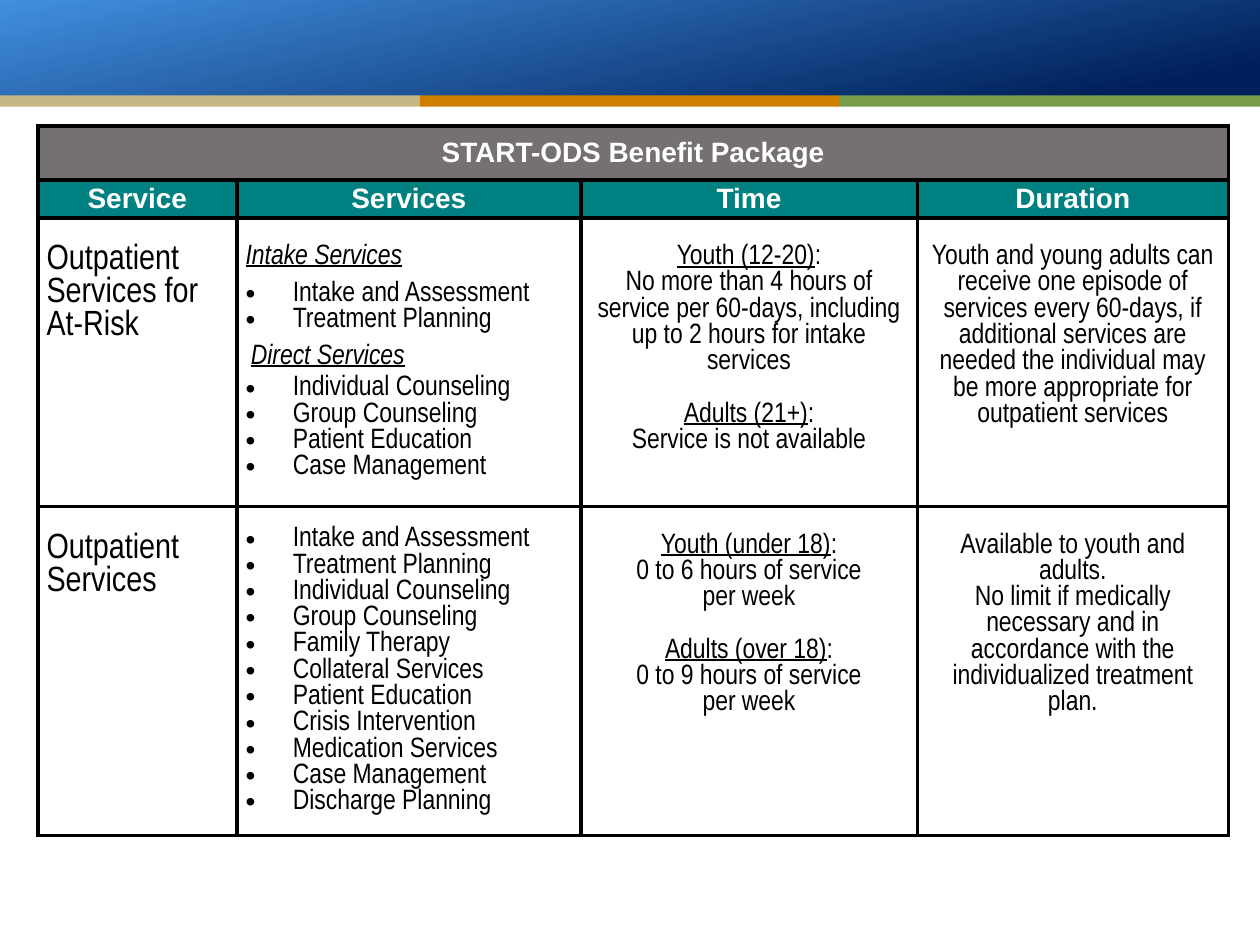
from dataclasses import dataclass
from lxml import etree
from pptx import Presentation
from pptx.dml.color import RGBColor as Rgb
from pptx.enum import shapes, text
from pptx.oxml.ns import qn
from pptx.util import Pt


@dataclass(frozen=True)
class Theme:
    navy: str = "00205B"
    sky: str = "418FDE"
    bars: tuple = ("C5B783", "CF7F00", "789D4A")
    gray: str = "767171"
    teal: str = "008080"
    white: str = "FFFFFF"
    black: str = "000000"
    head: str = "Arial"
    body: str = "Arial Narrow"
    size: int = 16
    large: int = 20
    line: float = 2.25
    gap: int = 15
    hang: int = 27


T = Theme()
MID = text.MSO_ANCHOR.MIDDLE
TOP = text.MSO_ANCHOR.TOP

TITLE = "START-ODS Benefit Package"
HEADS = ["Service", "Services", "Time", "Duration"]
COLS = [113.76, 196.56, 192.24, 177.84]
ROWS = [30.96, 21.6, 164.88, 187.92]


def items(*names, first=0):
    """Bulleted lines, the first with its own space before."""
    return [("item", name, 0 if i else first) for i, name in enumerate(names)]


# Each line: kind, wording, space before
BODY = [
    [
        [("name", "Outpatient Services for At-Risk", 0)],
        [("head", "Intake Services", 0),
         *items("Intake and Assessment", "Treatment Planning", first=6),
         ("sub", "Direct Services", 6),
         *items("Individual Counseling", "Group Counseling",
                "Patient Education", "Case Management", first=3)],
        [("group", "Youth (12-20)", 0),
         ("note", "No more than 4 hours of service per 60-days, including "
                  "up to 2 hours for intake services", 0),
         ("group", "Adults (21+)", T.gap),
         ("note", "Service is not available", 0)],
        [("note", "Youth and young adults can receive one episode of services "
                  "every 60-days, if additional services are needed the "
                  "individual may be more appropriate for outpatient services", 0)],
    ],
    [
        [("name", "Outpatient Services", 0)],
        items("Intake and Assessment", "Treatment Planning",
              "Individual Counseling", "Group Counseling", "Family Therapy",
              "Collateral Services", "Patient Education",
              "Crisis Intervention", "Medication Services",
              "Case Management", "Discharge Planning"),
        [("group", "Youth (under 18)", 0),
         ("note", "0 to 6 hours of service", 0),
         ("note", "per week", 0),
         ("group", "Adults (over 18)", T.gap),
         ("note", "0 to 9 hours of service", 0),
         ("note", "per week", 0)],
        [("note", "Available to youth and adults.", 0),
         ("note", "No limit if medically necessary and in accordance with "
                  "the individualized treatment plan.", 0)],
    ],
]


def rect(slide, x, y, w, h):
    box = slide.shapes.add_shape(shapes.MSO_SHAPE.RECTANGLE,
                                 Pt(x), Pt(y), Pt(w), Pt(h))
    box.shadow.inherit = False
    box.line.fill.background()
    return box


def banner(slide, x, y, w, h):
    # Gradient band
    fill = rect(slide, x, y, w, h).fill
    fill.gradient()
    fill.gradient_angle = 102
    for stop, color, place in zip(fill.gradient_stops, (T.navy, T.sky), (0.09, 1)):
        stop.color.rgb = Rgb.from_string(color)
        stop.position = place
    # Three colour bars along its foot
    part = w / len(T.bars)
    for i, color in enumerate(T.bars):
        bar = rect(slide, x + i * part, y + h - 0.5, part, 6.5)
        bar.fill.solid()
        bar.fill.fore_color.rgb = Rgb.from_string(color)


def border(cell):
    props = cell._tc.get_or_add_tcPr()
    for i, side in enumerate(("lnL", "lnR", "lnT", "lnB")):
        line = etree.Element(qn("a:" + side), w=str(Pt(T.line)))
        fill = etree.SubElement(line, qn("a:solidFill"))
        etree.SubElement(fill, qn("a:srgbClr"), val=T.black)
        props.insert(i, line)


def bullet(para):
    props = para._p.get_or_add_pPr()
    props.set("marL", str(Pt(T.hang)))
    props.set("indent", str(-Pt(T.hang)))
    etree.SubElement(props, qn("a:buFont"), typeface=T.head)
    etree.SubElement(props, qn("a:buChar"), char="•")


def style(run, face, color, size=T.size, bold=False):
    font = run.font
    font.name, font.size, font.bold = face, Pt(size), bold
    font.color.rgb = Rgb.from_string(color)


def frame(cell, anchor, top=0):
    cell.margin_left = cell.margin_right = Pt(5)
    cell.margin_top, cell.margin_bottom = Pt(top), 0
    cell.vertical_anchor = anchor
    border(cell)


def header(cell, label, color):
    frame(cell, MID)
    cell.fill.solid()
    cell.fill.fore_color.rgb = Rgb.from_string(color)
    para = cell.text_frame.paragraphs[0]
    para.text = label
    para.alignment = text.PP_ALIGN.CENTER
    for run in para.runs:
        style(run, T.head, T.white, bold=True)


def write(para, kind, label, before):
    if kind == "item":
        bullet(para)
    elif kind == "sub":
        para._p.get_or_add_pPr().set("marL", str(Pt(3)))
    para.text = label
    if kind == "group":
        para.add_run().text = ":"
    if kind in ("group", "note"):
        para.alignment = text.PP_ALIGN.CENTER
    if before:
        para.space_before = Pt(before)
    for run in para.runs:
        style(run, T.body, T.black, T.large if kind == "name" else T.size)
    lead = para.runs[0].font
    lead.underline = kind in ("head", "sub", "group")
    lead.italic = kind in ("head", "sub")


def content(cell, lines, anchor, top):
    frame(cell, anchor, top)
    cell.fill.background()
    paras = cell.text_frame
    for i, line in enumerate(lines):
        write(paras.add_paragraph() if i else paras.paragraphs[0], *line)


def benefits(slide, x, y):
    grid = slide.shapes.add_table(len(ROWS), len(COLS), Pt(x), Pt(y),
                                  Pt(sum(COLS)), Pt(sum(ROWS))).table
    grid.first_row = grid.horz_banding = False
    for col, width in zip(grid.columns, COLS):
        col.width = Pt(width)
    for row, height in zip(grid.rows, ROWS):
        row.height = Pt(height)
    # Title and column heads
    grid.cell(0, 0).merge(grid.cell(0, len(COLS) - 1))
    for c, label in enumerate(HEADS):
        header(grid.cell(0, c), "" if c else TITLE, T.gray)
        header(grid.cell(1, c), label, T.teal)
    # Service rows: the list column is centred, the rest start a line down
    for r, row in enumerate(BODY, 2):
        for c, lines in enumerate(row):
            listed = c == 1
            content(grid.cell(r, c), lines, MID if listed else TOP,
                    0 if listed else T.gap)


def main():
    deck = Presentation()
    deck.slide_width, deck.slide_height = Pt(720), Pt(540)
    slide = deck.slides.add_slide(deck.slide_layouts[6])
    banner(slide, 0, 0, 720, 55)
    benefits(slide, 21.6, 72)
    deck.save("out.pptx")


if __name__ == "__main__":
    main()
